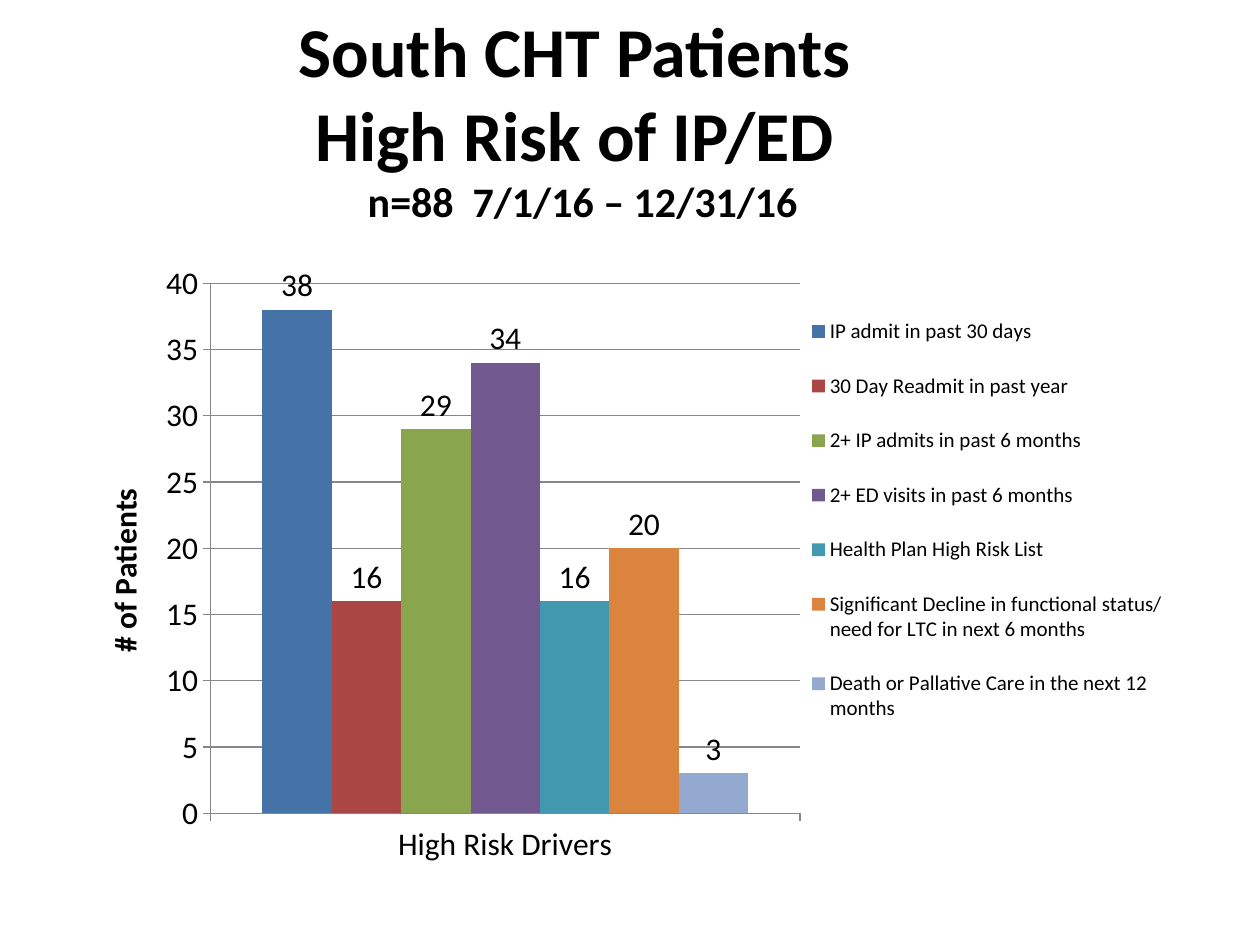
from lxml import etree
from pptx import Presentation
from pptx import util as u
from pptx.chart import data as chart_data
from pptx.dml import color
from pptx.enum import chart as kinds, text
from pptx.oxml import ns

FONT = "Calibri"
COLORS = {"ink": "000000", "line": "878787"}
TITLE_LINES = [
    ("South CHT Patients ", 40),
    ("High Risk of IP/ED ", 40),
    ("n=88  7/1/16 – 12/31/16", 24),
]
DRIVERS = [
    ("IP admit in past 30 days", 38, "4572A7"),
    ("30 Day Readmit in past year", 16, "AA4643"),
    ("2+ IP admits in past 6 months", 29, "89A54E"),
    ("2+ ED visits in past 6 months", 34, "71588F"),
    ("Health Plan High Risk List ", 16, "4198AF"),
    ("Significant Decline in functional status/ need for LTC in next 6 months", 20, "DB843D"),
    ("Death or Pallative Care in the next 12 months", 3, "93A9CF"),
]


def rgb(value):
    return color.RGBColor.from_string(value)


def style_font(font, size, bold=False):
    font.name, font.size, font.bold = FONT, u.Pt(size), bold
    font.color.rgb = rgb(COLORS["ink"])


def set_layout(element, index, **fractions):
    for old in element.findall(ns.qn("c:layout")):
        element.remove(old)
    layout = etree.Element(ns.qn("c:layout"))
    manual = etree.SubElement(layout, ns.qn("c:manualLayout"))
    if "plotArea" in element.tag:
        etree.SubElement(manual, ns.qn("c:layoutTarget")).set("val", "inner")
    for name in ("xMode", "yMode"):
        etree.SubElement(manual, ns.qn("c:" + name)).set("val", "edge")
    for name, value in fractions.items():
        etree.SubElement(manual, ns.qn("c:" + name)).set("val", str(value))
    element.insert(index, layout)


def place_title(page, left, top, width, height):
    box = page.shapes.title
    box.left, box.top, box.width, box.height = map(u.Pt, (left, top, width, height))
    frame = box.text_frame
    frame.word_wrap = True
    frame.auto_size = text.MSO_AUTO_SIZE.NONE
    frame.vertical_anchor = text.MSO_ANCHOR.TOP
    frame.margin_left = frame.margin_right = frame.margin_top = frame.margin_bottom = 0
    para = frame.paragraphs[0]
    para.alignment = text.PP_ALIGN.CENTER
    for number, (line, size) in enumerate(TITLE_LINES):
        if number:
            para.add_line_break()
        span = para.add_run()
        span.text = line
        style_font(span.font, size, bold=True)


def format_axes(chart):
    for axis in (chart.category_axis, chart.value_axis):
        axis.major_tick_mark = kinds.XL_TICK_MARK.OUTSIDE
        axis.minor_tick_mark = kinds.XL_TICK_MARK.NONE
        axis.format.line.color.rgb = rgb(COLORS["line"])
        axis.format.line.width = u.Pt(0.75)
        style_font(axis.tick_labels.font, 18)
    axis = chart.value_axis
    axis.minimum_scale, axis.maximum_scale, axis.major_unit = 0, 40, 5
    axis.has_major_gridlines = True
    axis.major_gridlines.format.line.color.rgb = rgb(COLORS["line"])
    axis.major_gridlines.format.line.width = u.Pt(0.75)
    span = axis.axis_title.text_frame.paragraphs[0].add_run()
    span.text = "# of Patients"
    style_font(span.font, 18, bold=True)
    set_layout(axis.axis_title._element, 1, x=0.03, y=0.37)


def place_chart(page, left, top, width, height):
    values = chart_data.CategoryChartData()
    values.categories = ["High Risk Drivers"]
    for name, count, _ in DRIVERS:
        values.add_series(name, [count])
    chart = page.shapes.add_chart(
        kinds.XL_CHART_TYPE.COLUMN_CLUSTERED, *map(u.Pt, (left, top, width, height)), values
    ).chart
    style_font(chart.font, 18)
    chart.has_title = False
    format_axes(chart)

    plot = chart.plots[0]
    plot.gap_width, plot.overlap, plot.vary_by_categories = 150, 0, False
    for series, (_, _, fill) in zip(plot.series, DRIVERS):
        series.format.fill.solid()
        series.format.fill.fore_color.rgb = rgb(fill)
        labels = series.data_labels
        labels.show_value = True
        labels.position = kinds.XL_LABEL_POSITION.OUTSIDE_END
        style_font(labels.font, 18)

    chart.has_legend = True
    legend = chart.legend
    legend.position = kinds.XL_LEGEND_POSITION.RIGHT
    legend.include_in_layout = False
    style_font(legend.font, 12)
    set_layout(legend._element, 1, x=0.65, y=0.06, w=0.33, h=0.74)
    plot_area = chart._chartSpace.find(".//" + ns.qn("c:plotArea"))
    set_layout(plot_area, 0, x=0.13, y=0.05, w=0.52, h=0.85)


def main():
    deck = Presentation()
    deck.slide_width, deck.slide_height = u.Pt(720), u.Pt(540)
    page = deck.slides.add_slide(deck.slide_layouts[5])
    place_title(page, 48, 4.5, 570, 128)
    place_chart(page, 36, 144, 648, 356.4)
    deck.save("out.pptx")


if __name__ == "__main__":
    main()
